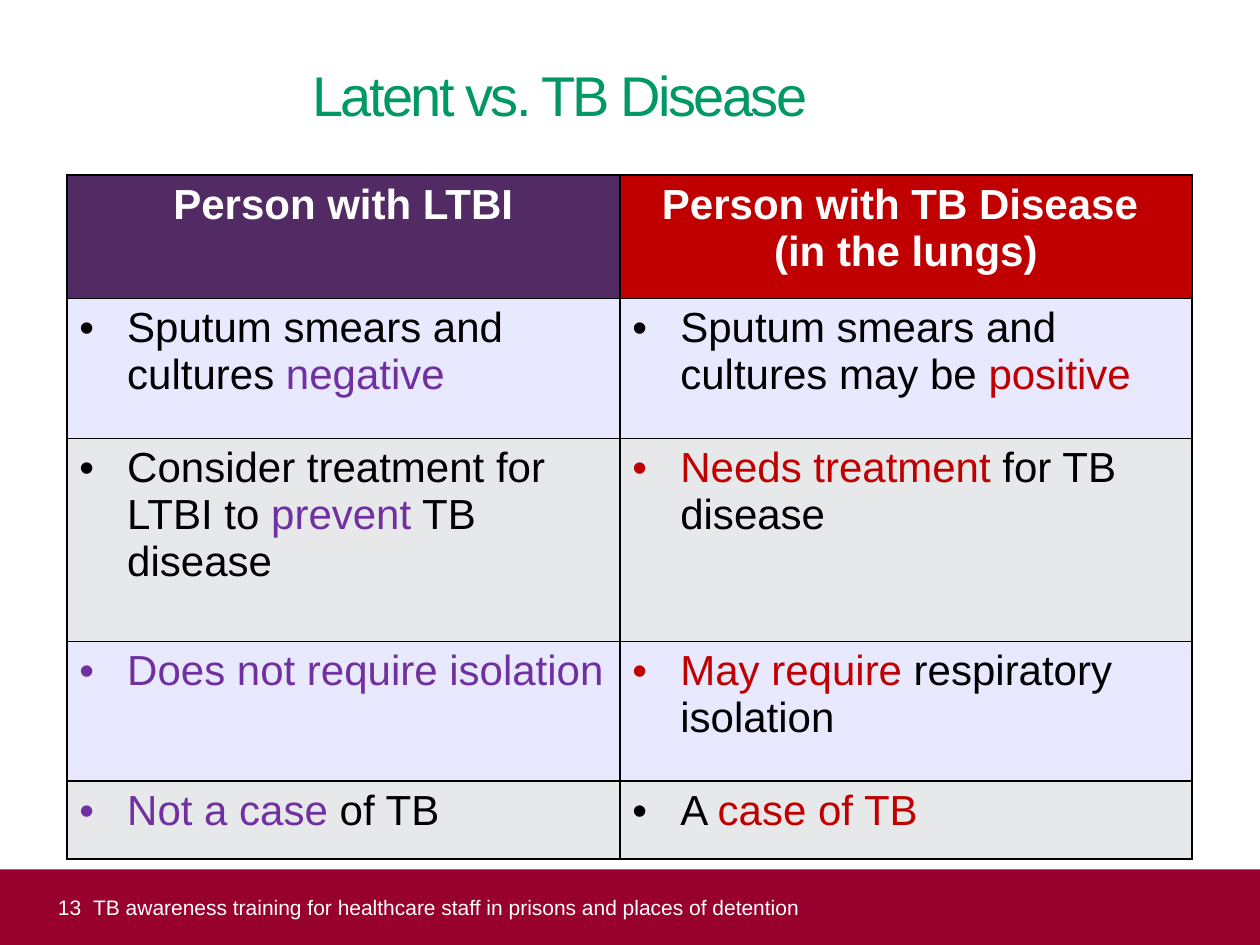
from dataclasses import dataclass

from lxml import etree
from pptx import Presentation
from pptx.dml.color import RGBColor
from pptx.enum.shapes import MSO_SHAPE
from pptx.enum.text import MSO_ANCHOR, MSO_AUTO_SIZE, PP_ALIGN
from pptx.oxml.ns import qn
from pptx.util import Inches, Pt

RECTANGLE = MSO_SHAPE.RECTANGLE
TOP, MIDDLE = MSO_ANCHOR.TOP, MSO_ANCHOR.MIDDLE
NO_AUTOFIT = MSO_AUTO_SIZE.NONE
LEFT, CENTER = PP_ALIGN.LEFT, PP_ALIGN.CENTER
TITLE_ONLY = 5


@dataclass(frozen=True)
class Theme:
    font: str = "Arial"
    title_size: int = 32
    table_size: int = 24
    footer_size: int = 12
    green: str = "009966"
    white: str = "FFFFFF"
    black: str = "000000"
    latent_header: str = "532B64"
    latent: str = "7030A0"
    disease: str = "C00000"
    lavender: str = "CCCCFF"
    lavender_opacity: int = 44
    grey: str = "E7E8EA"
    footer: str = "98002E"


THEME = Theme()
COLUMN_WIDTHS = (4.39, 4.54)
ROW_HEIGHTS = (0.98, 1.11, 1.61, 1.11, 0.62)
HEADERS = (
    (("Person with LTBI",), THEME.latent_header),
    (("Person with TB Disease ", "(in the lungs)"), THEME.disease),
)
COMPARISONS = (
    (
        (("Sputum smears and cultures ", THEME.black), ("negative", THEME.latent)),
        (("Sputum smears and cultures may be ", THEME.black), ("positive", THEME.disease)),
    ),
    (
        (("Consider treatment for LTBI to ", THEME.black), ("prevent", THEME.latent),
         (" TB disease", THEME.black)),
        (("Needs treatment ", THEME.disease), ("for TB disease", THEME.black)),
    ),
    (
        (("Does not require isolation", THEME.latent),),
        (("May require ", THEME.disease), ("respiratory isolation", THEME.black)),
    ),
    (
        (("Not a case ", THEME.latent), ("of TB", THEME.black)),
        (("A ", THEME.black), ("case of TB", THEME.disease)),
    ),
)


def add_run(paragraph, text, size, color, bold=False):
    run = paragraph.add_run()
    run.text = text
    run.font.name = THEME.font
    run.font.size = Pt(size)
    run.font.bold = bold
    run.font.color.rgb = RGBColor.from_string(color)
    return run


def paint(fill, color):
    fill.solid()
    fill.fore_color.rgb = RGBColor.from_string(color)


def set_bullet(paragraph, indent):
    properties = paragraph._p.get_or_add_pPr()
    properties.set("marL", str(Inches(indent)))
    properties.set("indent", str(-Inches(indent)))
    etree.SubElement(properties, qn("a:buFont"), typeface=THEME.font)
    etree.SubElement(properties, qn("a:buChar"), char="•")


def set_tab_stop(paragraph, position):
    stops = etree.SubElement(paragraph._p.get_or_add_pPr(), qn("a:tabLst"))
    etree.SubElement(stops, qn("a:tab"), pos=str(Inches(position)), algn="l")


def set_borders(cell):
    properties = cell._tc.get_or_add_tcPr()
    for side in ("a:lnL", "a:lnR", "a:lnT", "a:lnB"):
        line = etree.SubElement(properties, qn(side), w=str(Pt(1)))
        solid = etree.SubElement(line, qn("a:solidFill"))
        etree.SubElement(solid, qn("a:srgbClr"), val=THEME.black)


def set_opacity(cell, percent):
    color = cell._tc.tcPr.find(qn("a:solidFill")).find(qn("a:srgbClr"))
    etree.SubElement(color, qn("a:alpha"), val=str(percent * 1000))


def add_title(slide, text):
    title = slide.shapes.title
    title.left, title.top = Inches(2.48), Inches(0.48)
    title.width, title.height = Inches(4.59), Inches(0.83)
    frame = title.text_frame
    frame.margin_left = frame.margin_right = frame.margin_top = frame.margin_bottom = 0
    frame.vertical_anchor = TOP
    frame.auto_size = NO_AUTOFIT
    frame.word_wrap = True
    paragraph = frame.paragraphs[0]
    paragraph.alignment = LEFT
    run = add_run(paragraph, text, THEME.title_size, THEME.green)
    run.font._element.set("spc", "-150")


def fill_header(cell, lines, color):
    set_borders(cell)
    paint(cell.fill, color)
    frame = cell.text_frame
    for index, line in enumerate(lines):
        paragraph = frame.add_paragraph() if index else frame.paragraphs[0]
        paragraph.alignment = CENTER
        add_run(paragraph, line, THEME.table_size, THEME.white, bold=True)


def fill_comparison(cell, phrases, shaded):
    set_borders(cell)
    paint(cell.fill, THEME.grey if shaded else THEME.lavender)
    if not shaded:
        set_opacity(cell, THEME.lavender_opacity)
    paragraph = cell.text_frame.paragraphs[0]
    set_bullet(paragraph, 0.38)
    paragraph.space_after = Pt(6)
    for text, color in phrases:
        add_run(paragraph, text, THEME.table_size, color)


def add_comparison_table(slide):
    table = slide.shapes.add_table(
        len(ROW_HEIGHTS), len(COLUMN_WIDTHS), Inches(0.53), Inches(1.39),
        Inches(sum(COLUMN_WIDTHS)), Inches(sum(ROW_HEIGHTS))).table
    table.first_row = table.horz_banding = False
    for column, width in zip(table.columns, COLUMN_WIDTHS):
        column.width = Inches(width)
    for row, height in zip(table.rows, ROW_HEIGHTS):
        row.height = Inches(height)
    for column, (lines, color) in enumerate(HEADERS):
        fill_header(table.cell(0, column), lines, color)
    for row, comparison in enumerate(COMPARISONS, start=1):
        for column, phrases in enumerate(comparison):
            fill_comparison(table.cell(row, column), phrases, shaded=row % 2 == 0)


def add_footer(slide, number, text):
    footer = slide.shapes.add_shape(
        RECTANGLE, 0, Inches(6.9), Inches(10), Inches(0.6))
    footer.shadow.inherit = False
    paint(footer.fill, THEME.footer)
    footer.line.fill.background()
    frame = footer.text_frame
    frame.margin_left, frame.margin_right = Inches(0.46), Inches(0.1)
    frame.margin_top = frame.margin_bottom = 0
    frame.vertical_anchor = MIDDLE
    frame.word_wrap = True
    paragraph = frame.paragraphs[0]
    set_tab_stop(paragraph, 0.28)
    paragraph.alignment = LEFT
    add_run(paragraph, f"{number}\t{text}", THEME.footer_size, THEME.white)


def main():
    presentation = Presentation()
    presentation.slide_width, presentation.slide_height = Inches(10), Inches(7.5)
    slide = presentation.slides.add_slide(presentation.slide_layouts[TITLE_ONLY])
    add_title(slide, "Latent vs. TB Disease")
    add_comparison_table(slide)
    add_footer(slide, 13, "TB awareness training for healthcare staff in prisons and places of detention")
    presentation.save("out.pptx")


if __name__ == "__main__":
    main()
